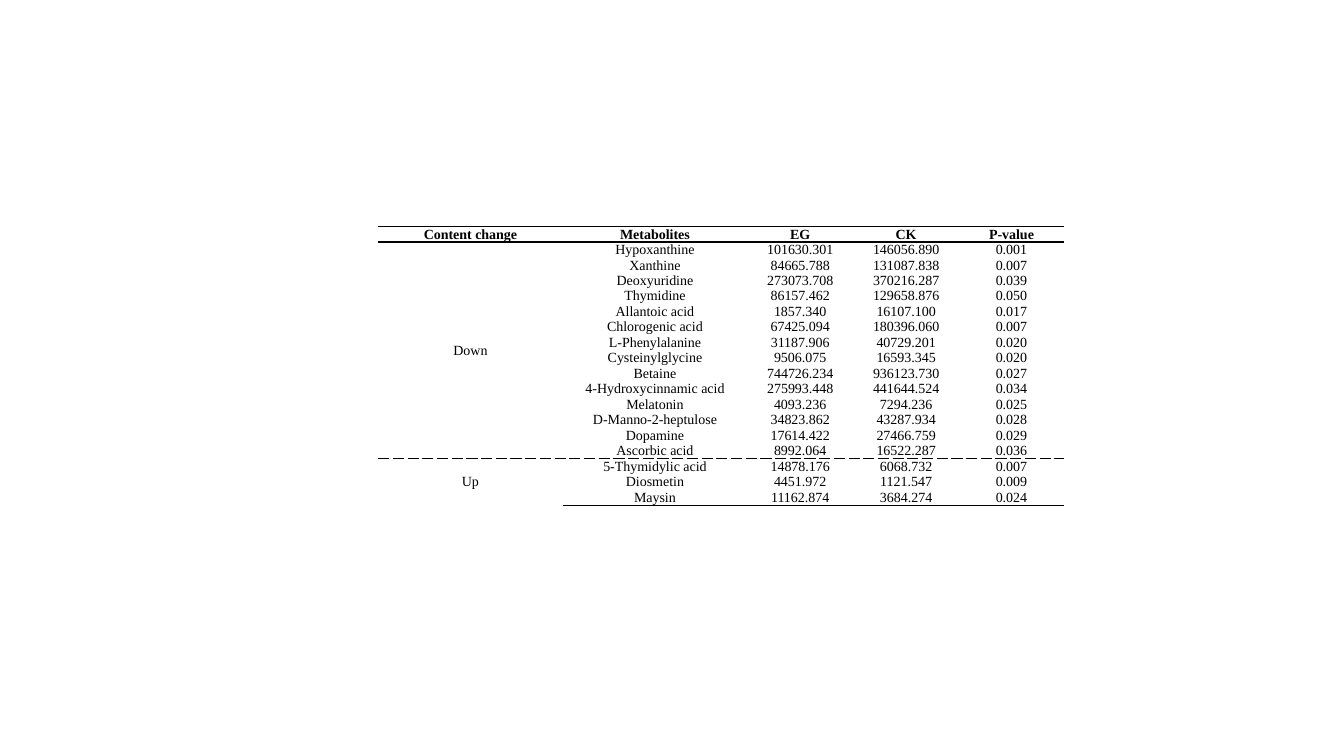
from lxml.etree import SubElement
from pptx import Presentation
from pptx.dml.color import RGBColor
from pptx.enum.text import MSO_ANCHOR, PP_ALIGN
from pptx.oxml.ns import qn
from pptx.util import Cm, Pt

# Content
HEAD = ["Content change", "Metabolites", "EG", "CK", "P-value"]
GROUPS = {
    "Down": [
        ("Hypoxanthine", "101630.301", "146056.890", "0.001"),
        ("Xanthine", "84665.788", "131087.838", "0.007"),
        ("Deoxyuridine", "273073.708", "370216.287", "0.039"),
        ("Thymidine", "86157.462", "129658.876", "0.050"),
        ("Allantoic acid", "1857.340", "16107.100", "0.017"),
        ("Chlorogenic acid", "67425.094", "180396.060", "0.007"),
        ("L-Phenylalanine", "31187.906", "40729.201", "0.020"),
        ("Cysteinylglycine", "9506.075", "16593.345", "0.020"),
        ("Betaine", "744726.234", "936123.730", "0.027"),
        ("4-Hydroxycinnamic acid", "275993.448", "441644.524", "0.034"),
        ("Melatonin", "4093.236", "7294.236", "0.025"),
        ("D-Manno-2-heptulose", "34823.862", "43287.934", "0.028"),
        ("Dopamine", "17614.422", "27466.759", "0.029"),
        ("Ascorbic acid", "8992.064", "16522.287", "0.036"),
    ],
    "Up": [
        ("5-Thymidylic acid", "14878.176", "6068.732", "0.007"),
        ("Diosmetin", "4451.972", "1121.547", "0.009"),
        ("Maysin", "11162.874", "3684.274", "0.024"),
    ],
}
WIDTHS = [4.65, 4.65, 2.67, 2.67, 2.64]
ROW = 0.39
BLACK, WHITE = "000000", "FFFFFF"


def color(code):
    return RGBColor.from_string(code)


def border(cell, side, dash):
    """Draw one cell edge; no dash name means no line."""
    line = SubElement(cell._tc.get_or_add_tcPr(), qn("a:ln" + side), w=str(Pt(1)))
    if dash:
        fill = SubElement(line, qn("a:solidFill"))
        SubElement(fill, qn("a:srgbClr"), val=BLACK)
        SubElement(line, qn("a:prstDash"), val=dash)
    else:
        SubElement(line, qn("a:noFill"))


def style(cell, top, base):
    for side, dash in zip("LRTB", (None, None, top, base)):
        border(cell, side, dash)
    cell.fill.solid()
    cell.fill.fore_color.rgb = color(WHITE)
    cell.margin_left = cell.margin_right = Cm(0.18)
    cell.margin_top = cell.margin_bottom = 0
    cell.vertical_anchor = MSO_ANCHOR.MIDDLE


def write(cell, text, bold=False):
    para = cell.text_frame.paragraphs[0]
    para.alignment = PP_ALIGN.CENTER
    run = para.add_run()
    run.text = text
    run.font.name = "Times New Roman"
    run.font.size = Pt(10)
    run.font.bold = bold
    run.font.color.rgb = color(BLACK)


deck = Presentation()
deck.slide_width, deck.slide_height = Cm(33.87), Cm(19.05)
slide = deck.slides.add_slide(deck.slide_layouts[6])

# Table frame
count = 1 + sum(len(rows) for rows in GROUPS.values())
frame = slide.shapes.add_table(
    count, len(HEAD), Cm(9.53), Cm(5.71), Cm(sum(WIDTHS)), Cm(ROW * count))
table = frame.table
table.first_row = table.horz_banding = False
for col, width in zip(table.columns, WIDTHS):
    col.width = Cm(width)
for row in table.rows:
    row.height = Cm(ROW)

# Rules: solid around the header and at the foot, dashed between groups
split = 1 + len(GROUPS["Down"])
rules = {0: "solid", 1: "solid", split: "dash", count: "solid"}
for r in range(count):
    for c in range(len(HEAD)):
        style(table.cell(r, c), rules.get(r), rules.get(r + 1))

# Header
for c, text in enumerate(HEAD):
    write(table.cell(0, c), text, bold=True)

# Groups, each with one merged label cell
start = 1
for label, rows in GROUPS.items():
    first = table.cell(start, 0)
    first.merge(table.cell(start + len(rows) - 1, 0))
    write(first, label)
    for r, values in enumerate(rows, start):
        for c, text in enumerate(values, 1):
            write(table.cell(r, c), text)
    start += len(rows)

deck.save("out.pptx")
